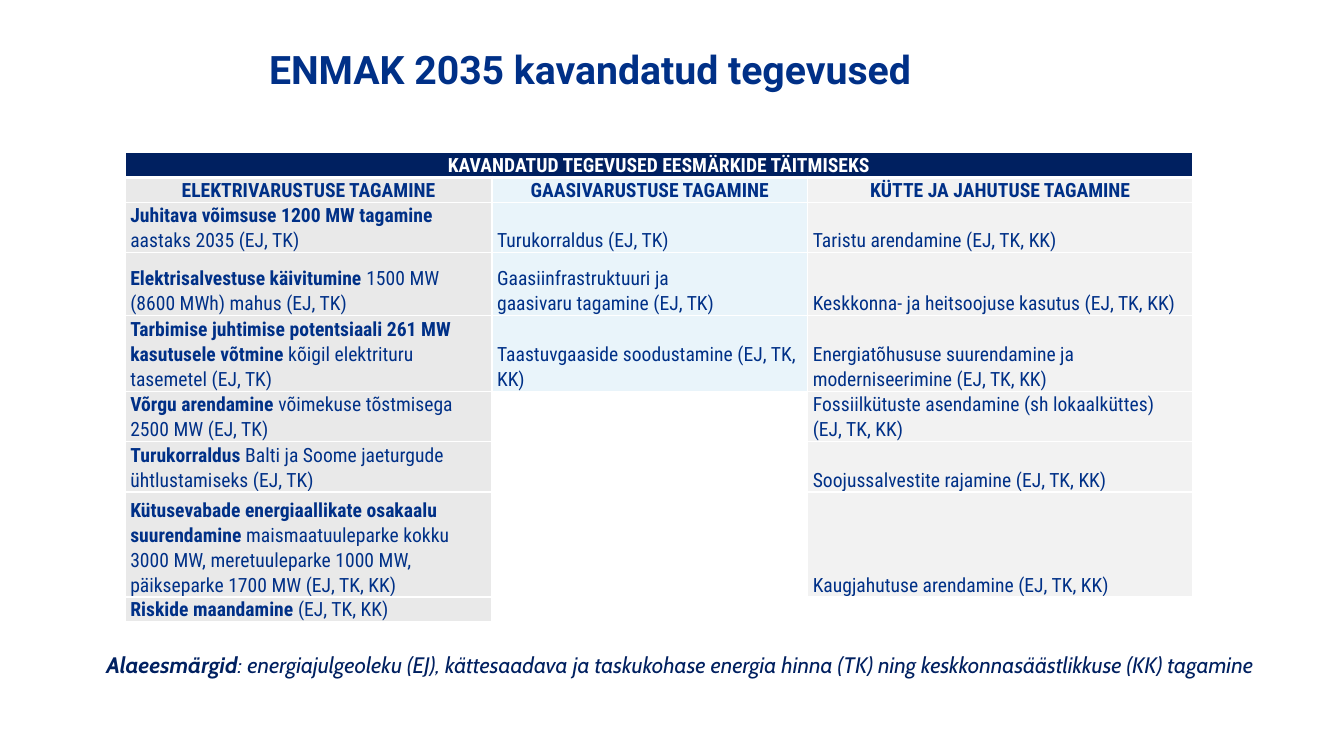
import pptx
import pptx.dml.color
import pptx.enum.text
import pptx.oxml
import pptx.oxml.ns
import pptx.util
from pptx.util import Pt

RGBColor = pptx.dml.color.RGBColor
ALIGN = pptx.enum.text.PP_ALIGN
ANCHOR = pptx.enum.text.MSO_ANCHOR
AUTO_SIZE = pptx.enum.text.MSO_AUTO_SIZE

WHITE = RGBColor(0xFF, 0xFF, 0xFF)
BLUE = RGBColor(0x00, 0x30, 0x87)
NAVY = RGBColor(0x00, 0x20, 0x60)
COLUMN_FILLS = [RGBColor(0xE9, 0xE9, 0xE9), RGBColor(0xE9, 0xF4, 0xFA), RGBColor(0xF2, 0xF2, 0xF2)]

COLUMN_WIDTHS = [262, 225.5, 275]
ROW_HEIGHTS = [13, 17.3, 36, 45, 54, 36, 36, 75, 17.3]
BANNER = "KAVANDATUD TEGEVUSED EESMÄRKIDE TÄITMISEKS"
HEADINGS = ["ELEKTRIVARUSTUSE TAGAMINE", "GAASIVARUSTUSE TAGAMINE", "KÜTTE JA JAHUTUSE TAGAMINE"]
# Each row: bold lead and plain rest for electricity, then gas, then heating
ACTIONS = [
    ("Juhitava võimsuse 1200 MW tagamine ", "aastaks 2035 (EJ, TK)",
     "Turukorraldus (EJ, TK)", "Taristu arendamine (EJ, TK, KK)"),
    ("Elektrisalvestuse käivitumine ", "1500 MW (8600 MWh) mahus (EJ, TK)",
     "Gaasiinfrastruktuuri ja \ngaasivaru tagamine (EJ, TK)",
     "Keskkonna- ja heitsoojuse kasutus (EJ, TK, KK)"),
    ("Tarbimise juhtimise potentsiaali 261 MW kasutusele võtmine ",
     "kõigil elektrituru tasemetel (EJ, TK)",
     "Taastuvgaaside soodustamine (EJ, TK, KK)",
     "Energiatõhususe suurendamine ja \nmoderniseerimine (EJ, TK, KK)"),
    ("Võrgu arendamine ", "võimekuse tõstmisega 2500 MW (EJ, TK)",
     "", "Fossiilkütuste asendamine (sh lokaalküttes) (EJ, TK, KK)"),
    ("Turukorraldus", " Balti ja Soome jaeturgude ühtlustamiseks (EJ, TK)",
     "", "Soojussalvestite rajamine (EJ, TK, KK)"),
    ("Kütusevabade energiaallikate osakaalu suurendamine ",
     "maismaatuuleparke kokku 3000 MW, meretuuleparke 1000 MW, päikseparke 1700 MW (EJ, TK, KK)",
     "", "Kaugjahutuse arendamine (EJ, TK, KK)"),
    ("Riskide maandamine", " (EJ, TK, KK)", "", ""),
]


def add_text(p, text, font, size, color, bold=False, italic=False):
    """Append text to a paragraph, turning each newline into a line break."""
    for i, line in enumerate(text.split("\n")):
        if i:
            p.add_line_break()
        r = p.add_run()
        r.text = line
        r.font.name = font
        r.font.size = Pt(size)
        r.font.color.rgb = color
        r.font.bold = bold
        r.font.italic = italic


def set_borders(cell, top=1, bottom=1):
    tcPr = cell._tc.get_or_add_tcPr()
    for i, (side, width) in enumerate([("L", 1), ("R", 1), ("T", top), ("B", bottom)]):
        tcPr.insert(i, pptx.oxml.parse_xml(
            f'<a:ln{side} {pptx.oxml.ns.nsdecls("a")} w="{Pt(width)}">'
            f'<a:solidFill><a:srgbClr val="{WHITE}"/></a:solidFill></a:ln{side}>'))


class Slide:
    title_font, table_font, note_font = "Roboto", "Roboto Condensed", "Cabin"
    table_size = 14

    def __init__(self, prs):
        self.s = prs.slides.add_slide(prs.slide_layouts[5])

    def title(self, text, x, y, w, h):
        sp = self.s.shapes.title
        sp.left, sp.top, sp.width, sp.height = Pt(x), Pt(y), Pt(w), Pt(h)
        tf = sp.text_frame
        tf.vertical_anchor = ANCHOR.TOP
        tf.auto_size = AUTO_SIZE.NONE
        p = tf.paragraphs[0]
        p.alignment = ALIGN.LEFT
        p.line_spacing = 0.9
        add_text(p, text, self.title_font, 28, BLUE, bold=True)

    def note(self, lead, rest, x, y, w, h):
        tf = self.s.shapes.add_textbox(Pt(x), Pt(y), Pt(w), Pt(h)).text_frame
        tf.word_wrap = True
        tf.auto_size = AUTO_SIZE.SHAPE_TO_FIT_TEXT
        p = tf.paragraphs[0]
        add_text(p, lead, self.note_font, 16, NAVY, bold=True, italic=True)
        add_text(p, rest, self.note_font, 16, NAVY, italic=True)

    def cell(self, cell, fill, bold="", plain="", color=BLUE, align=ALIGN.LEFT, anchor=ANCHOR.BOTTOM):
        cell.margin_left = cell.margin_right = Pt(3.6)
        cell.margin_top = cell.margin_bottom = 0
        cell.vertical_anchor = anchor
        cell.fill.solid()
        cell.fill.fore_color.rgb = fill
        p = cell.text_frame.paragraphs[0]
        p.alignment = align
        p.line_spacing = 1.07
        p.space_after = Pt(8)
        for text, is_bold in ((bold, True), (plain, False)):
            if text:
                add_text(p, text, self.table_font, self.table_size, color, bold=is_bold)
        # Keeps empty cells from stretching their row
        p._p.append(pptx.oxml.parse_xml(
            f'<a:endParaRPr {pptx.oxml.ns.nsdecls("a")} sz="{self.table_size * 100}">'
            f'<a:latin typeface="{self.table_font}"/></a:endParaRPr>'))

    def table(self, x, y):
        table = self.s.shapes.add_table(
            len(ROW_HEIGHTS), len(COLUMN_WIDTHS), Pt(x), Pt(y),
            Pt(sum(COLUMN_WIDTHS)), Pt(sum(ROW_HEIGHTS))).table
        table.first_row = table.horz_banding = False
        for column, width in zip(table.columns, COLUMN_WIDTHS):
            column.width = Pt(width)
        for row, height in zip(table.rows, ROW_HEIGHTS):
            row.height = Pt(height)

        for c, (heading, fill) in enumerate(zip(HEADINGS, COLUMN_FILLS)):
            self.cell(table.cell(0, c), NAVY, "" if c else BANNER, color=WHITE, align=ALIGN.CENTER)
            self.cell(table.cell(1, c), fill, heading, align=ALIGN.CENTER,
                      anchor=ANCHOR.TOP if c else ANCHOR.BOTTOM)
        for r, (lead, *texts) in enumerate(ACTIONS, start=2):
            for c, text in enumerate(texts):
                self.cell(table.cell(r, c), COLUMN_FILLS[c] if text else WHITE,
                          "" if c else lead, text)
        for r, row in enumerate(table.rows):
            for cell in row.cells:
                set_borders(cell, top=3 if r == 1 else 1, bottom=3 if r == 0 else 1)
        table.cell(0, 0).merge(table.cell(0, 2))


def main():
    prs = pptx.Presentation()
    prs.slide_width, prs.slide_height = Pt(960), Pt(540)
    slide = Slide(prs)
    slide.title("ENMAK 2035 kavandatud tegevused", 185, 32.4, 709, 80)
    slide.table(89.5, 109)
    slide.note("Alaeesmärgid",
               ": energiajulgeoleku (EJ), kättesaadava ja taskukohase energia hinna (TK) "
               "ning keskkonnasäästlikkuse (KK) tagamine", 69, 461.5, 842, 46)
    prs.save("out.pptx")


if __name__ == "__main__":
    main()
